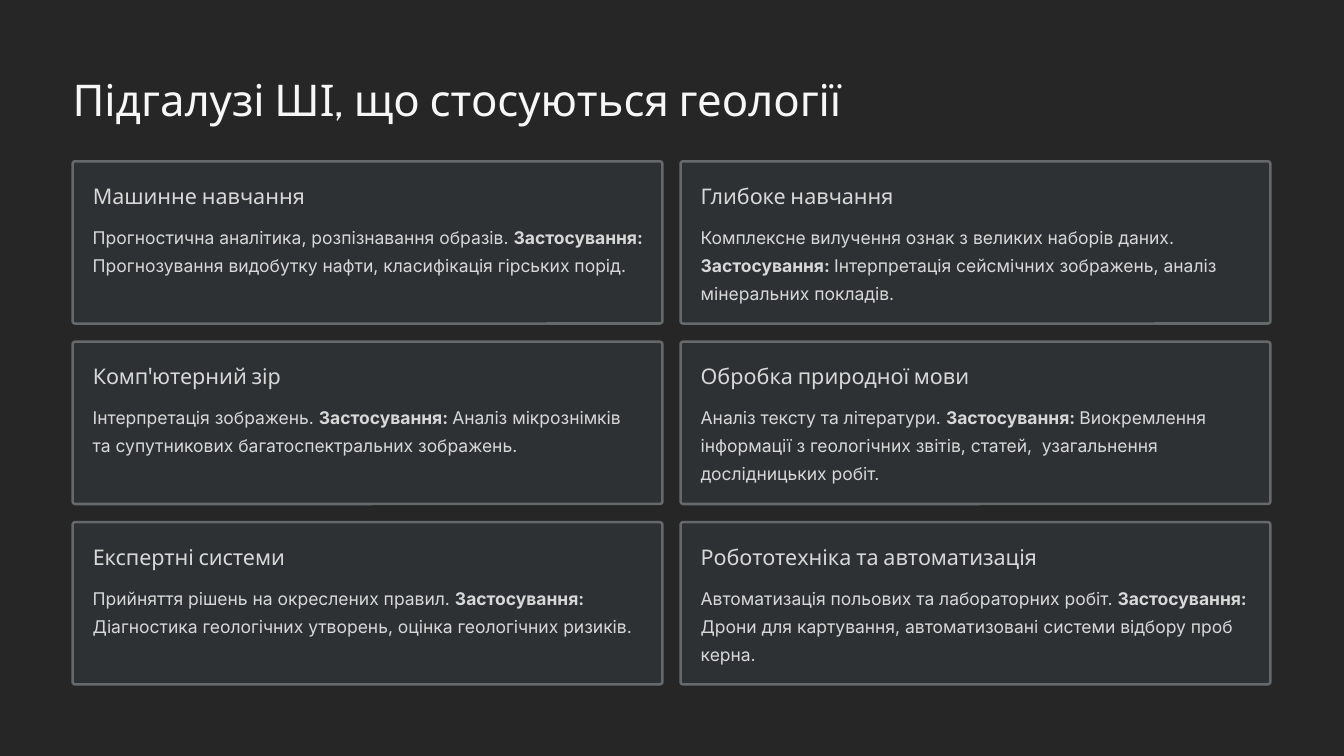
from dataclasses import dataclass

from pptx import Presentation
from pptx.dml.color import RGBColor
from pptx.enum.shapes import MSO_SHAPE as Shape
from pptx.enum.text import MSO_ANCHOR as Anchor, PP_ALIGN as Align
from pptx.util import Emu, Pt

PX = 9144  # EMU per px, 100 px to the inch

BACKDROP = "262626"
TITLE_COLOR = "F7F7F8"
TEXT_COLOR = "D6D9D7"
CARD_FILL = "2D3133"
CARD_LINE = "65696B"

LEFT, TOP = 72, 160
CARD_W, CARD_H = 585, 161
GAP = 18
PAD = 20
COLUMNS = 2
HEADING_H = 27
BODY_TOP = 58
BODY_W = 546
BODY_LINE_H = 28


@dataclass(frozen=True)
class Style:
    font: str
    size: float
    leading: float
    color: str


@dataclass(frozen=True)
class Card:
    heading: str
    summary: str
    usage: str
    heading_w: int = 219
    body_lines: int = 3


TITLE = Style("Cabin", 31.2, 39.2, TITLE_COLOR)
HEADING = Style("Cabin", 15.4, 19.6, TEXT_COLOR)
BODY = Style("Inter", 12.5, 20, TEXT_COLOR)

CARDS = [
    Card("Машинне навчання",
         "Прогностична аналітика, розпізнавання образів. ",
         "Прогнозування видобутку нафти, класифікація гірських порід."),
    Card("Глибоке навчання",
         "Комплексне вилучення ознак з великих наборів даних. ",
         "Інтерпретація сейсмічних зображень, аналіз мінеральних покладів."),
    Card("Комп'ютерний зір",
         "Інтерпретація зображень. ",
         "Аналіз мікрознімків та супутникових багатоспектральних зображень.",
         body_lines=2),
    Card("Обробка природної мови",
         "Аналіз тексту та літератури. ",
         "Виокремлення інформації з геологічних звітів, статей,  "
         "узагальнення дослідницьких робіт.",
         heading_w=273),
    Card("Експертні системи",
         "Прийняття рішень на окреслених правил. ",
         "Діагностика геологічних утворень, оцінка геологічних ризиків.",
         body_lines=2),
    Card("Робототехніка та автоматизація",
         "Автоматизація польових та лабораторних робіт. ",
         "Дрони для картування, автоматизовані системи відбору проб керна.",
         heading_w=342),
]


def px(n: int) -> Emu:
    return Emu(n * PX)


def rgb(value: str) -> RGBColor:
    return RGBColor.from_string(value)


def add_text(slide, x: int, y: int, w: int, h: int, style: Style,
             runs: list[tuple[str, bool]], wrap: bool = False) -> None:
    box = slide.shapes.add_textbox(px(x), px(y), px(w), px(h))
    tf = box.text_frame
    tf.word_wrap = wrap
    tf.vertical_anchor = Anchor.TOP
    tf.margin_left = tf.margin_right = tf.margin_top = tf.margin_bottom = 0
    p = tf.paragraphs[0]
    p.alignment = Align.LEFT
    p.line_spacing = Pt(style.leading)
    for text, bold in runs:
        r = p.add_run()
        r.text = text
        r.font.name = style.font
        r.font.size = Pt(style.size)
        r.font.bold = bold
        r.font.color.rgb = rgb(style.color)


def add_card(slide, x: int, y: int, card: Card) -> None:
    # Panel
    sp = slide.shapes.add_shape(Shape.ROUNDED_RECTANGLE,
                                px(x), px(y), px(CARD_W), px(CARD_H))
    sp.adjustments[0] = 0.016
    sp.shadow.inherit = False
    sp.fill.solid()
    sp.fill.fore_color.rgb = rgb(CARD_FILL)
    sp.line.color.rgb = rgb(CARD_LINE)
    sp.line.width = Pt(1.8)

    # Heading and description
    add_text(slide, x + PAD, y + PAD, card.heading_w, HEADING_H, HEADING,
             [(card.heading, False)])
    add_text(slide, x + PAD, y + BODY_TOP, BODY_W,
             card.body_lines * BODY_LINE_H, BODY,
             [(card.summary, False), ("Застосування: ", True),
              (card.usage, False)], wrap=True)


def main() -> None:
    prs = Presentation()
    prs.slide_width, prs.slide_height = px(1333), px(750)
    slide = prs.slides.add_slide(prs.slide_layouts[6])
    slide.background.fill.solid()
    slide.background.fill.fore_color.rgb = rgb(BACKDROP)

    # Title
    add_text(slide, LEFT, 70, 770, 55, TITLE,
             [("Підгалузі ШІ, що стосуються геології", False)])

    # Grid of cards
    for i, card in enumerate(CARDS):
        row, col = divmod(i, COLUMNS)
        add_card(slide, LEFT + col * (CARD_W + GAP),
                 TOP + row * (CARD_H + GAP), card)

    prs.save("out.pptx")


if __name__ == "__main__":
    main()
